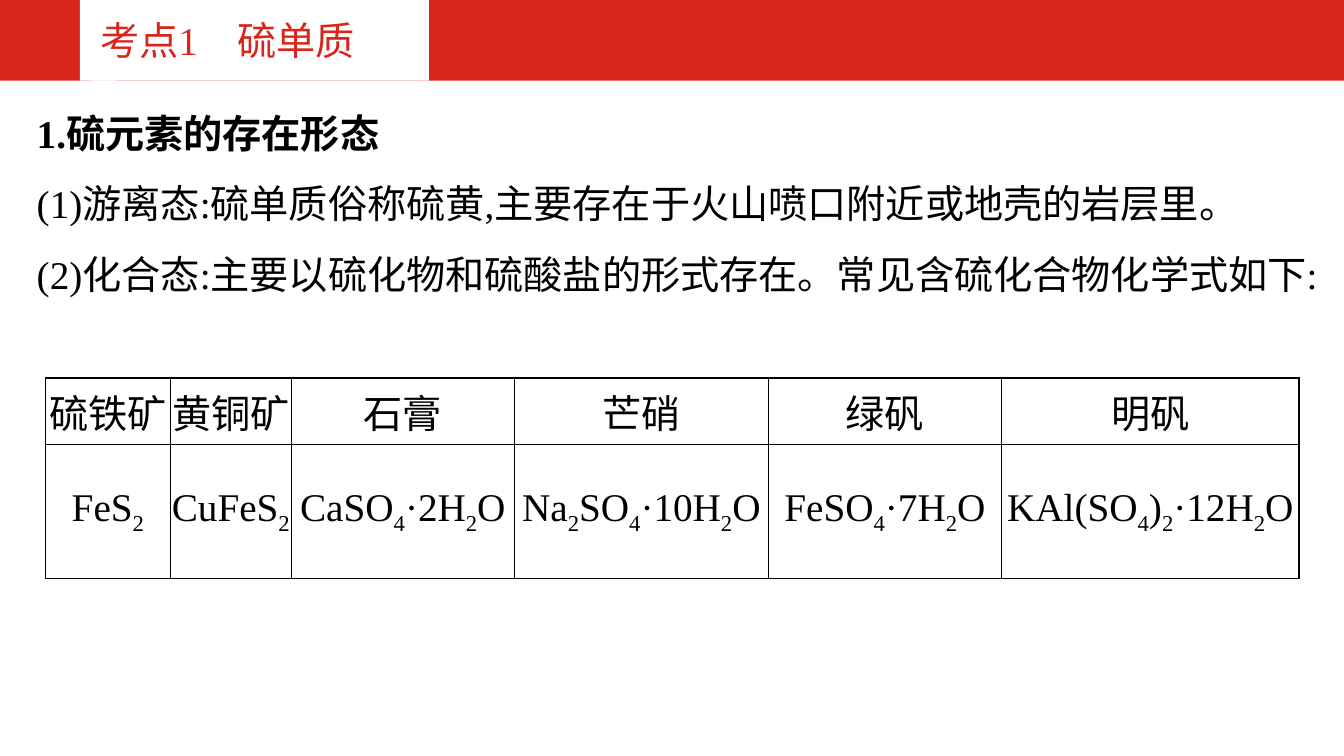
from lxml.etree import SubElement
from pptx import Presentation
from pptx.dml.color import RGBColor
from pptx.enum.shapes import MSO_SHAPE
from pptx.enum.text import MSO_ANCHOR, MSO_AUTO_SIZE, PP_ALIGN
from pptx.oxml.ns import qn
from pptx.util import Pt

COLORS = {"red": "DA251C", "white": "FFFFFF", "black": "000000"}

# Parts between bars alternate between normal text and subscript
MINERALS = [
    ("硫铁矿", "FeS|2", 89.3),
    ("黄铜矿", "CuFeS|2", 86.4),
    ("石膏", "CaSO|4|·2H|2|O", 159.3),
    ("芒硝", "Na|2|SO|4|·10H|2|O", 181.5),
    ("绿矾", "FeSO|4|·7H|2|O", 166.5),
    ("明矾", "KAl(SO|4|)|2|·12H|2|O", 212.6),
]
ROW_HEIGHTS = [47.6, 95.4]

BODY = [
    ("1.硫元素的存在形态", True),
    ("(1)游离态:硫单质俗称硫黄,主要存在于火山喷口附近或地壳的岩层里。", False),
    ("(2)化合态:主要以硫化物和硫酸盐的形式存在。常见含硫化合物化学式如下:", False),
]


def rgb(color):
    return RGBColor.from_string(COLORS[color])


def set_attrs(obj, **values):
    for name, value in values.items():
        setattr(obj, name, value)


def add_run(p, text, color="black", bold=False):
    r = p.add_run()
    r.text = text
    set_attrs(r.font, name="Times New Roman", size=Pt(28), bold=bold)
    r.font.color.rgb = rgb(color)
    return r


def add_rect(s, left, width, color):
    """Add a plain rectangle as tall as the header band."""
    sp = s.shapes.add_shape(MSO_SHAPE.RECTANGLE, Pt(left), 0, Pt(width), Pt(57.6))
    sp.shadow.inherit = False
    sp.fill.solid()
    sp.fill.fore_color.rgb = rgb(color)
    sp.line.fill.background()
    return sp


def add_header(s):
    add_rect(s, 0, 960, "red")
    add_rect(s, 57, 27, "white")
    tf = add_rect(s, 64.4, 242, "white").text_frame
    set_attrs(tf, word_wrap=True, vertical_anchor=MSO_ANCHOR.MIDDLE)
    p = tf.paragraphs[0]
    p.alignment = PP_ALIGN.LEFT
    add_run(p, "考点1　硫单质", "red")


def add_body(s):
    tf = s.shapes.add_textbox(Pt(19.2), Pt(57.6), Pt(922.4), Pt(211)).text_frame
    set_attrs(tf, word_wrap=True, auto_size=MSO_AUTO_SIZE.SHAPE_TO_FIT_TEXT)
    for i, (text, bold) in enumerate(BODY):
        p = tf.add_paragraph() if i else tf.paragraphs[0]
        p.line_spacing = 1.5
        add_run(p, text, bold=bold)


def add_borders(cell):
    tcPr = cell._tc.get_or_add_tcPr()
    for side in ("lnL", "lnR", "lnT", "lnB"):
        ln = SubElement(tcPr, qn(f"a:{side}"), w=str(Pt(1)))
        fill = SubElement(ln, qn("a:solidFill"))
        SubElement(fill, qn("a:srgbClr"), val=COLORS["black"])


def fill_cell(cell, text):
    add_borders(cell)
    cell.fill.background()
    set_attrs(cell, margin_left=0, margin_right=0, margin_top=0,
              margin_bottom=0, vertical_anchor=MSO_ANCHOR.MIDDLE)
    p = cell.text_frame.paragraphs[0]
    p.alignment = PP_ALIGN.CENTER
    for i, part in enumerate(text.split("|")):
        r = add_run(p, part)
        if i % 2:
            r._r.get_or_add_rPr().set("baseline", "-25000")


def add_minerals(s):
    width = sum(w for _, _, w in MINERALS)
    table = s.shapes.add_table(len(ROW_HEIGHTS), len(MINERALS), Pt(32.4), Pt(270),
                               Pt(width), Pt(sum(ROW_HEIGHTS))).table
    set_attrs(table, first_row=False, horz_banding=False)
    for row, height in zip(table.rows, ROW_HEIGHTS):
        row.height = Pt(height)
    for col, (name, formula, col_width) in enumerate(MINERALS):
        table.columns[col].width = Pt(col_width)
        fill_cell(table.cell(0, col), name)
        fill_cell(table.cell(1, col), formula)


def main():
    prs = Presentation()
    set_attrs(prs, slide_width=Pt(960), slide_height=Pt(540))
    s = prs.slides.add_slide(prs.slide_layouts[6])
    add_header(s)
    add_body(s)
    add_minerals(s)
    prs.save("out.pptx")


if __name__ == "__main__":
    main()
